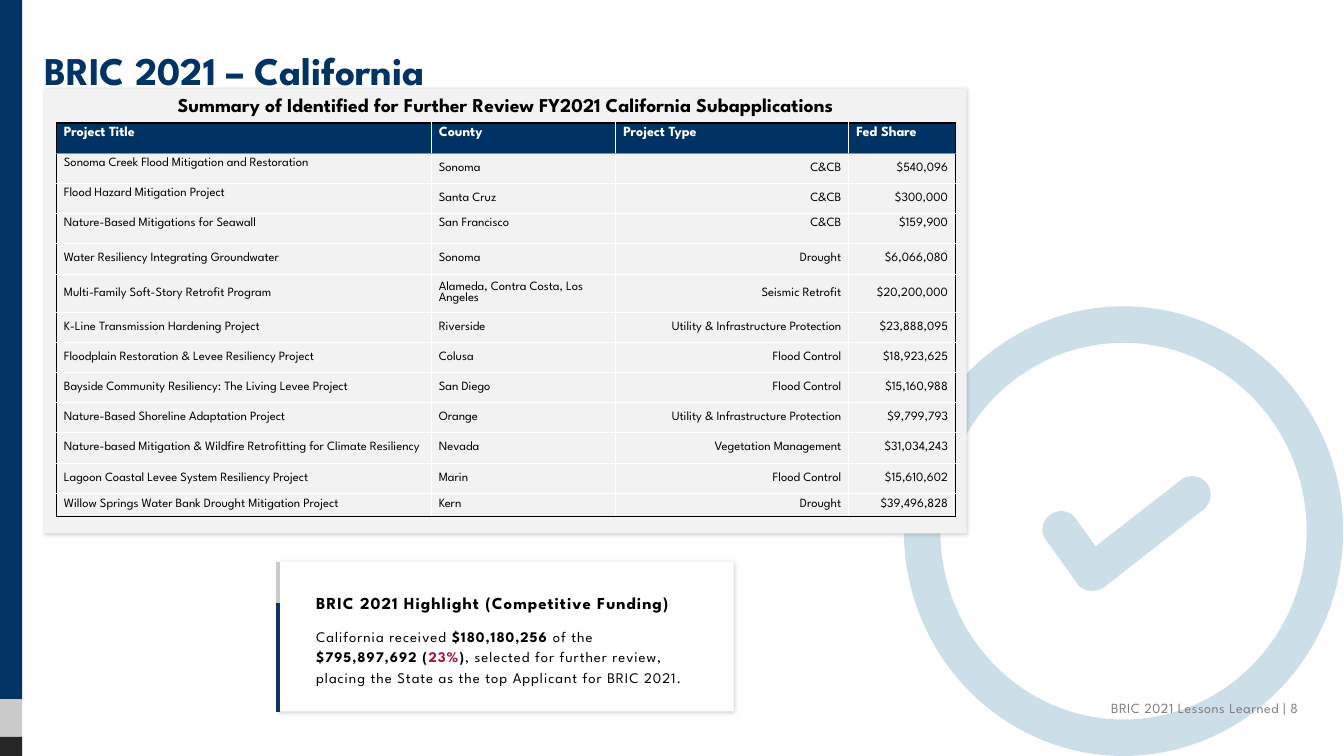
from lxml import etree
from pptx import Presentation
from pptx.dml.color import RGBColor
from pptx.enum.shapes import MSO_CONNECTOR, MSO_SHAPE
from pptx.enum.text import MSO_ANCHOR, PP_ALIGN
from pptx.oxml.ns import qn
from pptx.util import Cm, Pt

FONT = "League Spartan"
NAVY, GREY, GOLD = "013365", "CACACA", "BD9408"
BLACK, WHITE = "000000", "FFFFFF"

HEADER = ("Project Title", "County", "Project Type", "Fed Share")
PROJECTS = [
    ("Sonoma Creek Flood Mitigation and Restoration", "Sonoma", "C&CB", "$540,096"),
    ("Flood Hazard Mitigation Project", "Santa Cruz", "C&CB", "$300,000"),
    ("Nature-Based Mitigations for Seawall", "San Francisco", "C&CB", "$159,900"),
    ("Water Resiliency Integrating Groundwater", "Sonoma", "Drought", "$6,066,080"),
    ("Multi-Family Soft-Story Retrofit Program", "Alameda, Contra Costa, Los Angeles",
     "Seismic Retrofit", "$20,200,000"),
    ("K-Line Transmission Hardening Project", "Riverside",
     "Utility & Infrastructure Protection", "$23,888,095"),
    ("Floodplain Restoration & Levee Resiliency Project", "Colusa", "Flood Control", "$18,923,625"),
    ("Bayside Community Resiliency: The Living Levee Project", "San Diego",
     "Flood Control", "$15,160,988"),
    ("Nature-Based Shoreline Adaptation Project", "Orange",
     "Utility & Infrastructure Protection", "$9,799,793"),
    ("Nature-based Mitigation & Wildfire Retrofitting for Climate Resiliency", "Nevada",
     "Vegetation Management", "$31,034,243"),
    ("Lagoon Coastal Levee System Resiliency Project", "Marin", "Flood Control", "$15,610,602"),
    ("Willow Springs Water Bank Drought Mitigation Project", "Kern", "Drought", "$39,496,828"),
]
COLUMN_WIDTHS = (9.45, 4.65, 5.87, 2.69)
ROW_HEIGHTS = [0.76] * 5 + [0.95] + [0.76] * 6 + [0.58]

# Check mark in hundredths of a centimetre: one point is a line, three are a curve.
CHECK_START = (764, 447)
CHECK_STEPS = [
    [(757, 437), (744, 429), (734, 429)], [(721, 427), (709, 429), (699, 437)],
    [(483, 605)], [(432, 533)],
    [(417, 513), (386, 511), (368, 526)], [(348, 541), (343, 569), (358, 589)],
    [(437, 699)],
    [(445, 709), (455, 716), (467, 716)], [(480, 719), (493, 716), (503, 709)],
    [(754, 513)], [(775, 495), (780, 467), (764, 447)],
]


def rgb(color):
    return RGBColor.from_string(color)


def add_text(paragraph, text, size, color=BLACK, bold=False, spacing=0, align=None):
    run = paragraph.add_run()
    run.text = text
    font = run.font
    font.name, font.size, font.bold = FONT, Pt(size), bold
    font.color.rgb = rgb(color)
    if spacing:
        run._r.get_or_add_rPr().set("spc", str(round(spacing * 100)))
    if align is not None:
        paragraph.alignment = align


def set_margins(frame, left, top, right, bottom):
    frame.margin_left, frame.margin_top = Cm(left), Cm(top)
    frame.margin_right, frame.margin_bottom = Cm(right), Cm(bottom)


def add_frame(slide, left, top, width, height):
    frame = slide.shapes.add_textbox(Cm(left), Cm(top), Cm(width), Cm(height)).text_frame
    frame.word_wrap = True
    return frame


def paint(shape, color, alpha=100):
    shape.shadow.inherit = False
    shape.line.fill.background()
    shape.fill.solid()
    shape.fill.fore_color.rgb = rgb(color)
    if alpha < 100:
        tint = shape._element.spPr.find(qn("a:solidFill"))[0]
        etree.SubElement(tint, qn("a:alpha"), val=str(alpha * 1000))


def add_block(slide, box, color, kind=MSO_SHAPE.RECTANGLE, alpha=100):
    block = slide.shapes.add_shape(kind, *map(Cm, box))
    paint(block, color, alpha)
    return block


def add_card(slide, box, color, blur):
    """Rectangle with a soft shadow to the lower right."""
    card = add_block(slide, box, color)
    effects = card._element.spPr.find(qn("a:effectLst"))
    shadow = etree.SubElement(effects, qn("a:outerShdw"), blurRad=str(Pt(blur)),
                              dist=str(Pt(1)), dir="2700000", algn="tl", rotWithShape="0")
    tint = etree.SubElement(shadow, qn("a:srgbClr"), val="595959")
    etree.SubElement(tint, qn("a:alpha"), val="25000")
    return card


def add_side_bar(slide, left, top, width):
    for height, color in ((17.62, NAVY), (0.95, GREY), (0.48, "262626")):
        add_block(slide, (left, top, width, height), color)
        top += height


def curve_points(start, first, second, end, steps=8):
    for t in (step / steps for step in range(1, steps + 1)):
        weights = ((1 - t) ** 3, 3 * t * (1 - t) ** 2, 3 * t * t * (1 - t), t ** 3)
        yield tuple(sum(w * p[axis] for w, p in zip(weights, (start, first, second, end)))
                    for axis in (0, 1))


def add_check_icon(slide, left, top, width, height):
    points = [CHECK_START]
    for step in CHECK_STEPS:
        points += step if len(step) == 1 else list(curve_points(points[-1], *step))
    outline = slide.shapes.build_freeform(*CHECK_START, scale=Cm(0.01))
    outline.add_line_segments(points[1:], close=True)
    paint(outline.convert_to_shape(Cm(left), Cm(top)), "015E90", alpha=20)
    ring = add_block(slide, (left, top, width, height), "015E90", MSO_SHAPE.DONUT, alpha=20)
    ring.adjustments[0] = 0.083


def add_title(slide, left, top, width, height):
    title = slide.shapes.title
    title.left, title.top, title.width, title.height = map(Cm, (left, top, width, height))
    frame = title.text_frame
    frame.vertical_anchor = MSO_ANCHOR.TOP
    set_margins(frame, 0, 0.45, 0, 0.13)
    add_text(frame.paragraphs[0], "BRIC 2021 – California", 28, NAVY, bold=True,
             align=PP_ALIGN.LEFT)


def add_footer(slide, left, top, width, height):
    frame = add_frame(slide, left, top, width, height)
    frame.vertical_anchor = MSO_ANCHOR.MIDDLE
    set_margins(frame, 0, 0.13, 0, 0.13)
    add_text(frame.paragraphs[0], "BRIC 2021 Lessons Learned | 8", 10, "7F7F7F",
             spacing=0.4, align=PP_ALIGN.RIGHT)


def set_borders(cell, row, column):
    outer, inner, rule = (BLACK, 1), (WHITE, 0.5), (GOLD, 1)
    last_row, last_column = len(PROJECTS), len(HEADER) - 1
    sides = {
        "L": outer if column == 0 else inner,
        "R": outer if column == last_column else inner,
        "T": {0: outer, 1: rule}.get(row, inner),
        "B": {0: rule, last_row: outer}.get(row, inner),
    }
    for side, (color, width) in sides.items():
        line = etree.SubElement(cell._tc.get_or_add_tcPr(), qn("a:ln" + side),
                                w=str(Pt(width)))
        etree.SubElement(etree.SubElement(line, qn("a:solidFill")), qn("a:srgbClr"), val=color)


def fill_cell(cell, text, row, column):
    at_top = row in (0, 3) or (row < 3 and column == 0)
    cell.vertical_anchor = MSO_ANCHOR.TOP if at_top else MSO_ANCHOR.MIDDLE
    set_margins(cell, 0.19, 0.1, 0.19, 0.1)
    set_borders(cell, row, column)
    paragraph = cell.text_frame.paragraphs[0]
    if row == 0:
        cell.fill.solid()
        cell.fill.fore_color.rgb = rgb("003364")
        add_text(paragraph, text, 10, WHITE, bold=True)
    else:
        cell.fill.background()
        add_text(paragraph, text, 9, align=PP_ALIGN.RIGHT if column > 1 else PP_ALIGN.LEFT)


def add_summary(slide, left, top, width, height):
    add_card(slide, (left, top, width, height), "F2F2F2", blur=2)
    heading = add_frame(slide, left + 2.38, top - 0.03, 18.5, 0.89)
    add_text(heading.paragraphs[0],
             "Summary of Identified for Further Review FY2021 California Subapplications",
             14, bold=True, align=PP_ALIGN.CENTER)
    table = slide.shapes.add_table(
        len(ROW_HEIGHTS), len(HEADER), Cm(left + 0.3), Cm(top + 0.86),
        Cm(sum(COLUMN_WIDTHS)), Cm(sum(ROW_HEIGHTS))).table
    table.horz_banding = False
    for column, column_width in zip(table.columns, COLUMN_WIDTHS):
        column.width = Cm(column_width)
    for r, (row_height, values) in enumerate(zip(ROW_HEIGHTS, [HEADER] + PROJECTS)):
        table.rows[r].height = Cm(row_height)
        for c, value in enumerate(values):
            fill_cell(table.cell(r, c), value, r, c)


def add_highlight(slide, left, top, width, height):
    frame = add_card(slide, (left, top, width, height), WHITE, blur=3).text_frame
    frame.word_wrap = True
    frame.vertical_anchor = MSO_ANCHOR.TOP
    set_margins(frame, 0.64, 0.71, 0.89, 0.64)
    heading, finding = frame.paragraphs[0], frame.add_paragraph()
    for paragraph in (heading, finding):
        paragraph.alignment = PP_ALIGN.LEFT
        paragraph.line_spacing = 1.17
        paragraph._p.get_or_add_pPr().set("marL", str(Cm(0.32)))
    heading.space_after = Pt(2)
    finding.space_before = finding.space_after = Pt(6)
    add_text(heading, "BRIC 2021 Highlight (Competitive Funding)", 12, bold=True, spacing=0.7)
    for text, bold, color in (
            ("California received ", False, BLACK), ("$180,180,256 ", True, BLACK),
            ("of the ", False, BLACK), ("$795,897,692 (", True, BLACK),
            ("23%", True, "B1143B"), (")", True, BLACK),
            (", selected for further review, placing the State as the top Applicant "
             "for BRIC 2021.", False, BLACK)):
        add_text(finding, text, 10.5, color, bold, spacing=0.7)
    for start, end, color in ((height, 0.94, "0F3364"), (1.04, 0, GREY)):
        accent = slide.shapes.add_connector(MSO_CONNECTOR.STRAIGHT, Cm(left), Cm(top + start),
                                            Cm(left), Cm(top + end))
        accent.line.color.rgb = rgb(color)
        accent.line.width = Pt(3)
        etree.SubElement(accent._element.spPr, qn("a:effectLst"))


def main():
    deck = Presentation()
    deck.slide_width, deck.slide_height = Cm(33.87), Cm(19.05)
    slide = deck.slides.add_slide(deck.slide_layouts[5])
    add_side_bar(slide, 0, 0, 0.56)
    add_check_icon(slide, 22.78, 7.72, 11.07, 11.33)
    add_title(slide, 1.12, 0.71, 31.57, 2.13)
    add_footer(slide, 12.17, 17.48, 20.55, 0.74)
    add_summary(slide, 1.12, 2.24, 23.24, 11.2)
    add_highlight(slide, 7.01, 14.15, 11.48, 3.78)
    deck.save("out.pptx")


if __name__ == "__main__":
    main()
